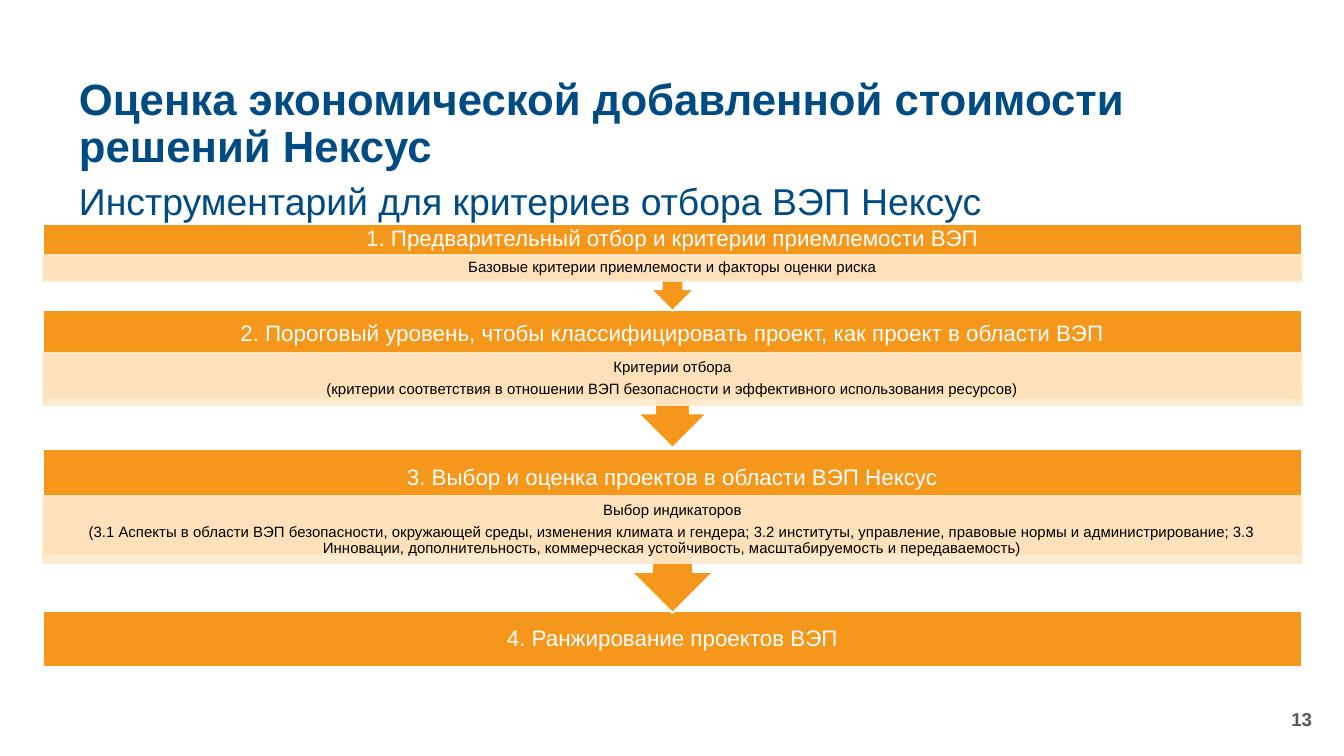
"""Build the slide with the four-step project selection flow."""
from lxml import etree
from pptx import Presentation
from pptx import util as u
from pptx.dml.color import RGBColor
from pptx.enum import shapes, text
from pptx.oxml.ns import qn

SCALE = 914400 / 134.4
HUES = {"blue": "004C82", "orange": "F4971A", "cream": "FEEACC",
        "white": "FFFFFF", "black": "000000", "grey": "575756"}
KIND, ALIGN, ANCHOR = shapes.MSO_SHAPE, text.PP_ALIGN, text.MSO_ANCHOR
LEFT, WIDE = 43, 1259


def px(*nums):
    return [u.Emu(round(n * SCALE)) for n in nums]


def write(lines, box=None, shape=None, size=12, hue="white", bold=False, align=ALIGN.CENTER,
          anchor=ANCHOR.MIDDLE, pads=(12, 12, 12, 12), line=0.9, after=0):
    frame = (shape or slide.shapes.add_textbox(*px(*box))).text_frame
    frame.word_wrap = True
    frame.vertical_anchor = anchor
    (frame.margin_left, frame.margin_top,
     frame.margin_right, frame.margin_bottom) = px(*pads)
    frame.text = "\n".join(lines)
    for para in frame.paragraphs:
        para.alignment = align
        para.line_spacing = line
        para.space_after = u.Pt(after)
        for run in para.runs:
            run.font.name = "Arial"
            run.font.size = u.Pt(size)
            run.font.bold = bold
            run.font.color.rgb = RGBColor.from_string(HUES[hue])


deck = Presentation()
deck.slide_width, deck.slide_height = px(1344, 756)
slide = deck.slides.add_slide(deck.slide_layouts[6])

write(["Инструментарий для критериев отбора ВЭП Нексус"], box=(66, 183, WIDE, 40), size=20,
      hue="blue", align=ALIGN.LEFT, anchor=ANCHOR.TOP, pads=(13, 0, 11, 0))

# title, top, height, label height, band top, band height, details
steps = [
    ("1. Предварительный отбор и критерии приемлемости ВЭП", 224, 87, 31, 255, 26,
     ["Базовые критерии приемлемости и факторы оценки риска"]),
    ("2. Пороговый уровень, чтобы классифицировать проект, как проект в области ВЭП",
     310, 138, 48, 353, 52,
     ["Критерии отбора",
      "(критерии соответствия в отношении ВЭП безопасности и эффективного "
      "использования ресурсов)"]),
    ("3. Выбор и оценка проектов в области ВЭП Нексус", 449, 164, 58, 496, 67,
     ["Выбор индикаторов",
      "(3.1 Аспекты в области ВЭП безопасности, окружающей среды, изменения климата "
      "и гендера; 3.2 институты, управление, правовые нормы и администрирование; "
      "3.3 Инновации, дополнительность, коммерческая устойчивость, масштабируемость "
      "и передаваемость)"]),
    ("4. Ранжирование проектов ВЭП", 611, 56, 56, 0, 0, []),
]
for title, top, high, label, low, deep, notes in reversed(steps):
    parts = [(KIND.UP_ARROW_CALLOUT if notes else KIND.RECTANGLE, top, high, "orange", "white")]
    if notes:
        parts.append((KIND.RECTANGLE, low, deep, "cream", "cream"))
    for kind, y, h, fill, edge in parts:
        shape = slide.shapes.add_shape(kind, *px(LEFT, y, WIDE, h))
        shape.shadow.inherit = False
        shape.fill.solid()
        shape.fill.fore_color.rgb = RGBColor.from_string(HUES[fill])
        shape.line.color.rgb = RGBColor.from_string(HUES[edge])
        shape.line.width = u.Pt(1)
        if kind == KIND.UP_ARROW_CALLOUT:
            shape.rotation = 180
        if fill == "cream":
            for tint in shape.fill._xPr.iter(qn("a:srgbClr")):
                etree.SubElement(tint, qn("a:alpha"), val="90000")
            write(notes, shape=shape, size=8, hue="black", pads=(8, 1, 8, 1), after=3)
    write([title], box=(LEFT, top, WIDE, label))

write(["Оценка экономической добавленной стоимости решений Нексус"], box=(66, 85, WIDE, 79),
      size=23.4, hue="blue", bold=True, align=ALIGN.LEFT, pads=(13, 7, 13, 7))
write(["13"], box=(1023, 699, 302, 40), size=10, hue="grey", bold=True,
      align=ALIGN.RIGHT, pads=(13, 7, 13, 7), line=1.0)

deck.save("out.pptx")
